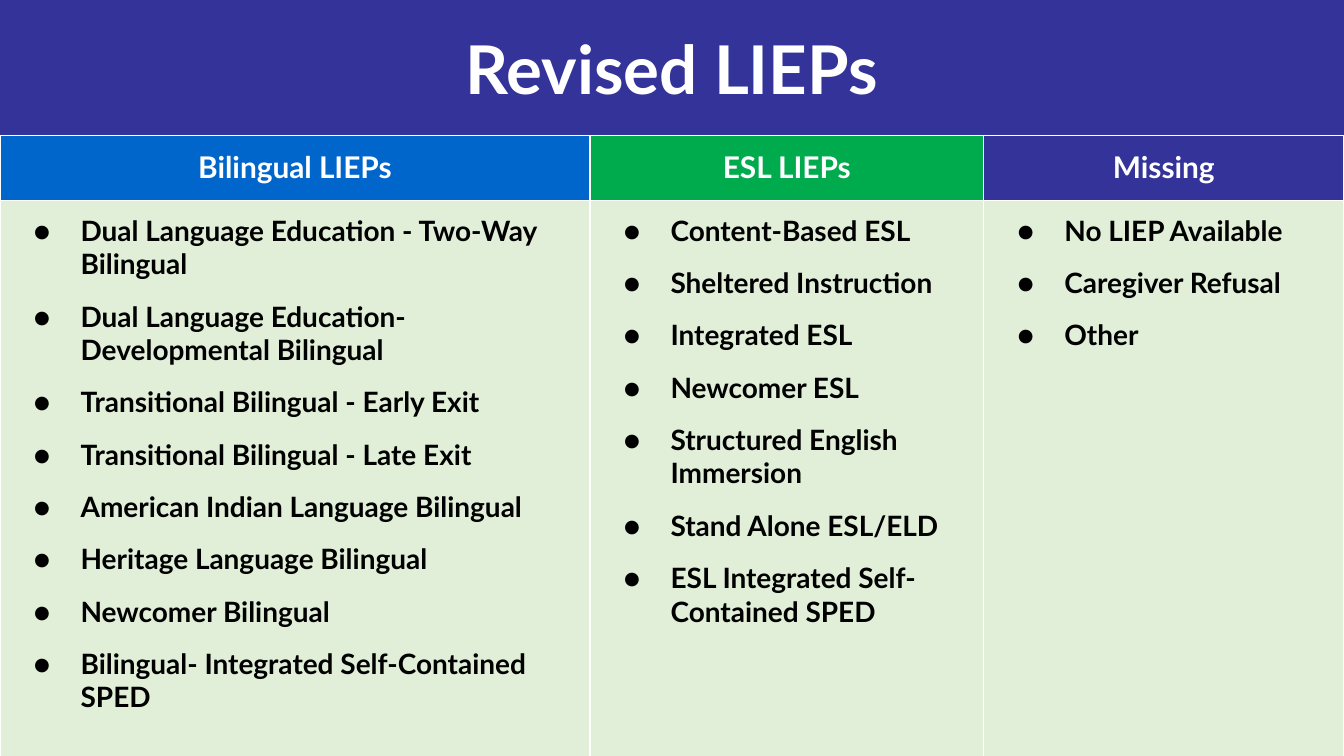
from lxml.etree import SubElement
from pptx import Presentation
from pptx.dml.color import RGBColor
from pptx.enum.shapes import MSO_SHAPE
from pptx.enum.text import MSO_ANCHOR, PP_ALIGN
from pptx.oxml import parse_xml
from pptx.oxml.ns import nsdecls, qn
from pptx.util import Pt

COLORS = {
    "indigo": "333399",
    "blue": "0066CC",
    "green": "00AB4E",
    "pale": "E1EFD8",
    "white": "FFFFFF",
    "black": "000000",
}
FONT = "Lato"
BAND_HEIGHT = 72.72
ROW_HEIGHTS = [34.56, 298.08]

# Heading, heading colour, column width, programs
COLUMNS = [
    ("Bilingual LIEPs", "blue", 316.08, [
        "Dual Language Education - Two-Way Bilingual",
        "Dual Language Education- Developmental Bilingual",
        "Transitional Bilingual - Early Exit",
        "Transitional Bilingual - Late Exit",
        "American Indian Language Bilingual",
        "Heritage Language Bilingual",
        "Newcomer Bilingual",
        "Bilingual- Integrated Self-Contained SPED",
    ]),
    ("ESL LIEPs", "green", 210.96, [
        "Content-Based ESL",
        "Sheltered Instruction",
        "Integrated ESL",
        "Newcomer ESL",
        "Structured English Immersion",
        "Stand Alone ESL/ELD",
        "ESL Integrated Self-Contained SPED",
    ]),
    ("Missing", "indigo", 192.96, [
        "No LIEP Available",
        "Caregiver Refusal",
        "Other",
    ]),
]


def style_text(paragraph, size, color):
    for run in paragraph.runs:
        run.font.name = FONT
        run.font.size = Pt(size)
        run.font.bold = True
        run.font.color.rgb = RGBColor.from_string(COLORS[color])


def style_cell(cell, fill):
    cell.margin_left = cell.margin_right = Pt(7.2)
    cell.margin_top = cell.margin_bottom = Pt(7.2)
    cell.fill.solid()
    cell.fill.fore_color.rgb = RGBColor.from_string(COLORS[fill])
    properties = cell._tc.get_or_add_tcPr()
    for position, side in enumerate("LRTB"):
        properties.insert(position, parse_xml(
            f'<a:ln{side} {nsdecls("a")} w="{Pt(0.75)}"><a:solidFill>'
            f'<a:srgbClr val="{COLORS["white"]}"/></a:solidFill></a:ln{side}>'))


presentation = Presentation()
presentation.slide_width = Pt(720)
presentation.slide_height = Pt(405)
slide = presentation.slides.add_slide(presentation.slide_layouts[6])

# Title band
band = slide.shapes.add_shape(
    MSO_SHAPE.RECTANGLE, Pt(-0.5), 0, Pt(720.5), Pt(BAND_HEIGHT))
band.shadow.inherit = False
band.fill.solid()
band.fill.fore_color.rgb = RGBColor.from_string(COLORS["indigo"])
band.line.fill.background()

title = slide.shapes.add_textbox(0, 0, Pt(720), Pt(BAND_HEIGHT))
title.text_frame.word_wrap = True
title.text_frame.vertical_anchor = MSO_ANCHOR.MIDDLE
title.text_frame.text = "Revised LIEPs"
title.text_frame.paragraphs[0].alignment = PP_ALIGN.CENTER
style_text(title.text_frame.paragraphs[0], 36, "white")

# Program table
programs_table = slide.shapes.add_table(
    len(ROW_HEIGHTS), len(COLUMNS), 0, Pt(BAND_HEIGHT),
    Pt(720), Pt(sum(ROW_HEIGHTS))).table
for row, height in zip(programs_table.rows, ROW_HEIGHTS):
    row.height = Pt(height)

for index, (heading, color, width, programs) in enumerate(COLUMNS):
    programs_table.columns[index].width = Pt(width)

    # Column heading
    heading_cell = programs_table.cell(0, index)
    style_cell(heading_cell, color)
    heading_cell.text_frame.text = heading
    heading_cell.text_frame.paragraphs[0].alignment = PP_ALIGN.CENTER
    style_text(heading_cell.text_frame.paragraphs[0], 16, "white")

    # Bulleted programs
    list_cell = programs_table.cell(1, index)
    style_cell(list_cell, "pale")
    list_cell.text_frame.text = "\n".join(programs)
    for number, paragraph in enumerate(list_cell.text_frame.paragraphs):
        if number:
            paragraph.space_before = Pt(10)
        properties = paragraph._p.get_or_add_pPr()
        properties.set("marL", str(Pt(36)))
        properties.set("indent", str(Pt(-25.2)))
        bullet_color = SubElement(properties, qn("a:buClr"))
        SubElement(bullet_color, qn("a:srgbClr"), val=COLORS["black"])
        SubElement(properties, qn("a:buFont"), typeface=FONT)
        SubElement(properties, qn("a:buChar"), char="●")
        style_text(paragraph, 15, "black")
    paragraph.space_after = Pt(10)

presentation.save("out.pptx")
